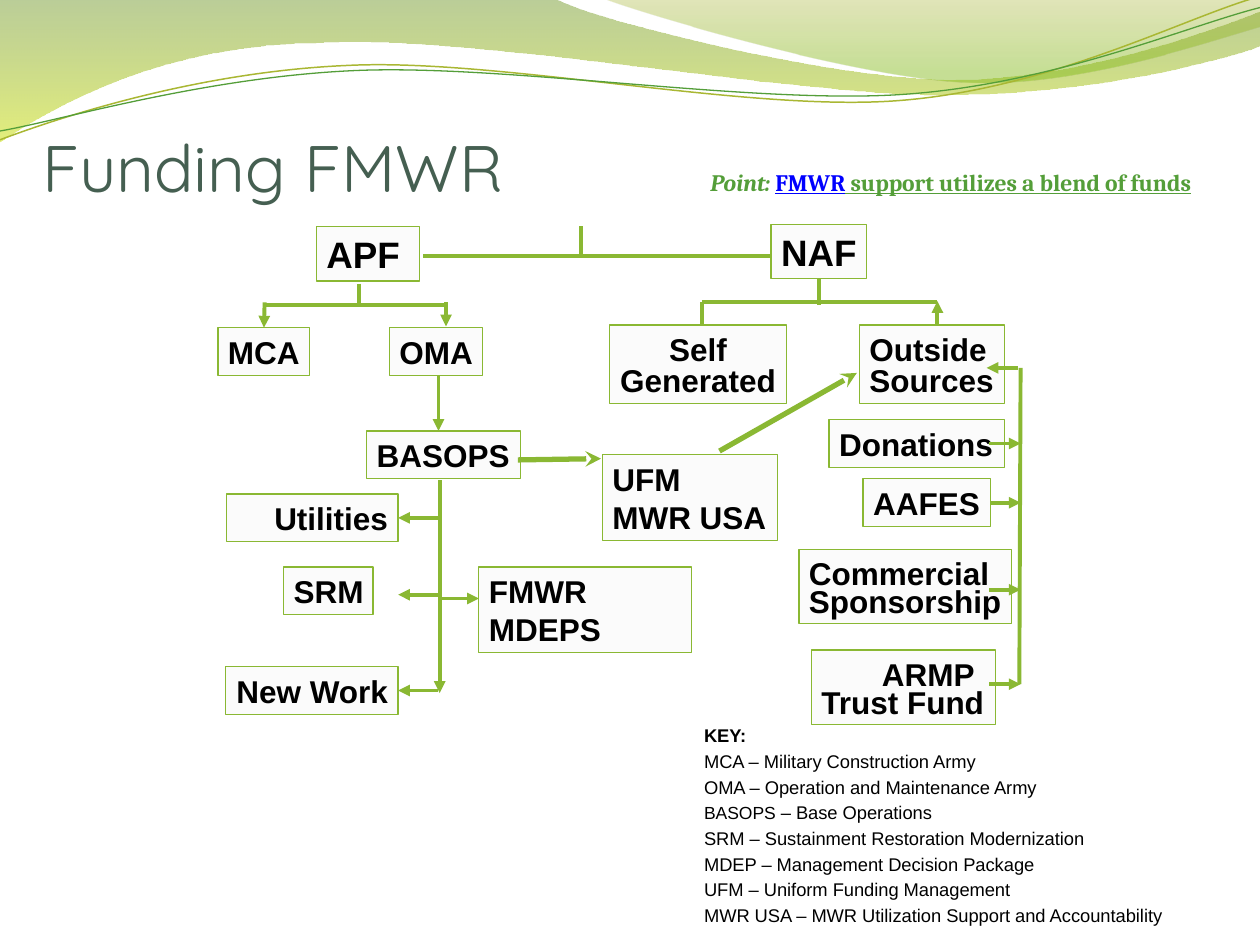
import pptx
import pptx.util
import pptx.dml.color
import pptx.enum.shapes
import pptx.enum.text
import pptx.oxml
import pptx.oxml.ns
from pptx.util import Inches

RGBColor = pptx.dml.color.RGBColor
ALIGN = pptx.enum.text.PP_ALIGN
ANCHOR = pptx.enum.text.MSO_ANCHOR
FIT = pptx.enum.text.MSO_AUTO_SIZE
qn = pptx.oxml.ns.qn
NS = pptx.oxml.ns.nsdecls("a")

GREEN = RGBColor(0x8A, 0xB8, 0x33)
DARK_GREEN = RGBColor(0x54, 0x9E, 0x39)
OLIVE = RGBColor(0xA9, 0xB7, 0x33)
TITLE_GREEN = RGBColor(0x45, 0x5F, 0x51)
BOX_GRAY = RGBColor(0xF8, 0xF8, 0xF8)
BLACK = RGBColor(0, 0, 0)
BLUE = RGBColor(0, 0, 0xFF)
WAVE_TOP, WAVE_BOTTOM = RGBColor(0x69, 0x92, 0x1C), RGBColor(0xCC, 0xE1, 0x0F)
CREST_TOP, CREST_BOTTOM = RGBColor(0x9B, 0xAA, 0x1A), RGBColor(0x81, 0xBA, 0x16)
TOP, LEFT, BOTTOM, RIGHT = range(4)


def set_alpha(fill_element, percents):
    for clr, percent in zip(fill_element.iter(qn("a:srgbClr")), percents):
        clr.append(pptx.oxml.parse_xml(f'<a:alpha {NS} val="{percent * 1000}"/>'))


def set_font(font, name, size, color, bold=False):
    font.name, font.size, font.bold = name, pptx.util.Pt(size), bold
    font.color.rgb = color


def add_curve(s, box, start, segments, closed):
    """Outline of lines (2 numbers each) and cubic curves (6 numbers each)."""
    left, top = box[:2]
    pairs = [start] + [seg[i:i + 2] for seg in segments for i in range(0, len(seg), 2)]
    points = [(Inches(left + x), Inches(top + y)) for x, y in pairs]
    builder = s.shapes.build_freeform(*points[0])
    builder.add_line_segments(points[1:], close=closed)
    sp = builder.convert_to_shape()
    sp.shadow.inherit = False
    steps = iter(list(sp.element.spPr.iter(qn("a:lnTo"))))
    for seg in segments:
        first = next(steps)
        if len(seg) == 6:
            cubic = pptx.oxml.parse_xml(f"<a:cubicBezTo {NS}/>")
            first.addprevious(cubic)
            for step in (first, next(steps), next(steps)):
                cubic.append(step[0])
                step.getparent().remove(step)
    return sp


def add_wave(s, box, start, segments, stops):
    sp = add_curve(s, box, start, segments, True)
    sp.line.fill.background()
    sp.fill.gradient()
    sp.fill.gradient_angle = 270
    for stop, (position, color, _) in zip(sp.fill.gradient_stops, stops):
        stop.position = position
        stop.color.rgb = color
    set_alpha(sp.element.spPr.find(qn("a:gradFill")), [percent for _, _, percent in stops])


def add_strand(s, box, start, segments, color, width):
    sp = add_curve(s, box, start, segments, False)
    sp.fill.background()
    sp.line.color.rgb = color
    sp.line.width = pptx.util.Pt(width)


def wave_banner(s, box):
    add_wave(s, box, (0, -0.01), [
        (4.4, -0.01), (4.75, 0.17, 6.63, 0.63, 7.58, 0.63), (8.53, 0.63, 9.58, 0.26, 10, 0.09),
        (10.01, 0.36), (9.83, 0.44, 8.69, 0.76, 7.45, 0.75), (6.22, 0.75, 3.81, 0.28, 2.57, 0.34),
        (1.29, 0.35, 0.45, 0.83, -0.01, 1.13)], [(0, WAVE_TOP, 45), (1, WAVE_BOTTOM, 55)])
    add_wave(s, box, (4.79, -0.01), [
        (5.09, 0.11, 6.82, 0.62, 7.68, 0.65), (8.55, 0.69, 9.61, 0.32, 10, 0.21), (10, 0)],
        [(0, CREST_TOP, 30), (0.8, CREST_BOTTOM, 45)])
    add_strand(s, box, (0, 1.11), [
        (0.48, 0.93, 1.57, 0.57, 2.76, 0.52), (3.95, 0.46, 5.92, 0.89, 7.12, 0.8),
        (8.33, 0.71, 9.38, 0.15, 9.97, -0.02)], OLIVE, 0.85)
    add_strand(s, box, (0, 1.04), [
        (0.47, 0.96, 1.63, 0.61, 2.83, 0.56), (4.02, 0.51, 5.97, 0.83, 7.16, 0.75),
        (8.36, 0.67, 9.41, 0.21, 10, 0.06)], DARK_GREEN, 0.75)


def title(s, box):
    sp = s.shapes.title
    sp.left, sp.top, sp.width, sp.height = map(Inches, box)
    tf = sp.text_frame
    tf.text = "Funding FMWR"
    tf.vertical_anchor = ANCHOR.BOTTOM
    tf.margin_left = tf.margin_right = tf.margin_bottom = 0
    tf.margin_top = Inches(0.05)
    p = tf.paragraphs[0]
    p.alignment = ALIGN.LEFT
    set_font(p.font, "Quicksand", 37.5, TITLE_GREEN)


def add_node(s, box, x, y, w, h, lines, size=18, align=ALIGN.LEFT, spacing=1.0, wrap=False):
    sp = s.shapes.add_shape(pptx.enum.shapes.MSO_SHAPE.RECTANGLE,
                            Inches(box[0] + x), Inches(box[1] + y), Inches(w), Inches(h))
    sp.shadow.inherit = False
    sp.fill.solid()
    sp.fill.fore_color.rgb = BOX_GRAY
    set_alpha(sp.element.spPr.find(qn("a:solidFill")), [50])
    sp.line.color.rgb = GREEN
    sp.line.width = pptx.util.Pt(0.75)
    tf = sp.text_frame
    tf.word_wrap = wrap
    tf.auto_size = FIT.SHAPE_TO_FIT_TEXT
    tf.vertical_anchor = ANCHOR.TOP
    tf.margin_left = Inches(0.08)
    tf.margin_right = Inches(0.05 if align == ALIGN.LEFT else 0.08)
    tf.margin_top = tf.margin_bottom = Inches(0.04)
    for i, line in enumerate(lines):
        p = tf.add_paragraph() if i else tf.paragraphs[0]
        p.text = line
        p.alignment = align
        if i:
            p.line_spacing = spacing
        set_font(p.font, "Arial", size, BLACK, True)
    return sp


def add_link(s, box, x1, y1, x2, y2, arrow=None, width=2.25, begin=None, end=None):
    left, top = box[:2]
    c = s.shapes.add_connector(pptx.enum.shapes.MSO_CONNECTOR.STRAIGHT, Inches(left + x1),
                               Inches(top + y1), Inches(left + x2), Inches(top + y2))
    c.line.color.rgb = GREEN
    c.line.width = pptx.util.Pt(width)
    if arrow:
        ln = c.element.spPr.find(qn("a:ln"))
        ln.append(pptx.oxml.parse_xml(f'<a:tailEnd {NS} type="{arrow}"/>'))
    c.element.spPr.append(pptx.oxml.parse_xml(f"<a:effectLst {NS}/>"))
    if begin:
        c.begin_connect(*begin)
    if end:
        c.end_connect(*end)


def apf_branch(s, box):
    add_node(s, box, 0.81, 0, 0.82, 0.43, ["APF"], 21)
    mca = add_node(s, box, 0.03, 0.8, 0.73, 0.38, ["MCA"])
    add_node(s, box, 1.39, 0.8, 0.74, 0.38, ["OMA"])
    utilities = add_node(s, box, 0.1, 2.12, 1.36, 0.38, ["Utilities"], align=ALIGN.RIGHT, wrap=True)
    add_node(s, box, 2.1, 2.7, 1.69, 0.68, ["FMWR MDEPS"], wrap=True)
    add_node(s, box, 0.55, 2.7, 0.71, 0.38, ["SRM"])
    new_work = add_node(s, box, 0.09, 3.49, 1.37, 0.38, ["New Work"], align=ALIGN.RIGHT)
    add_node(s, box, 1.21, 1.62, 1.22, 0.38, ["BASOPS"])
    add_link(s, box, 1.15, 0.45, 1.15, 0.63)
    add_link(s, box, 0.4, 0.62, 1.84, 0.62)
    add_link(s, box, 0.4, 0.6, 0.4, 0.79, "triangle", end=(mca, TOP))
    add_link(s, box, 1.84, 0.6, 1.84, 0.79, "triangle")
    add_link(s, box, 1.78, 1.18, 1.78, 1.62, "triangle")
    add_link(s, box, 1.79, 2.01, 1.79, 3.7, "triangle")
    for y, node in ((2.31, utilities), (2.92, None), (3.68, new_work)):
        add_link(s, box, 1.78, y, 1.46, y, "triangle", end=node and (node, RIGHT))
    add_link(s, box, 1.79, 2.95, 2.1, 2.95, "triangle")


def naf_branch(s, box):
    naf = add_node(s, box, 1.34, 0, 0.76, 0.43, ["NAF"], 21)
    add_node(s, box, 0.06, 0.8, 1.4, 0.62, ["Self", "Generated"], align=ALIGN.CENTER, spacing=0.8)
    add_node(s, box, 2.04, 0.8, 1.15, 0.62, ["Outside", "Sources"], spacing=0.8)
    add_node(s, box, 1.8, 1.55, 1.39, 0.38, ["Donations"])
    aafes = add_node(s, box, 2.07, 2.02, 1.01, 0.38, ["AAFES"])
    add_node(s, box, 1.56, 2.58, 1.69, 0.59, ["Commercial", "Sponsorship"], spacing=0.7)
    armp = add_node(s, box, 1.66, 3.38, 1.46, 0.59, ["ARMP", "Trust Fund"], spacing=0.7)
    armp.text_frame.paragraphs[0]._p.get_or_add_pPr().set("indent", str(Inches(0.48)))
    add_node(s, box, 0, 1.83, 1.39, 0.68, ["UFM", "MWR USA"])
    add_link(s, box, 1.72, 0.45, 1.72, 0.64, begin=(naf, BOTTOM))
    add_link(s, box, 0.79, 0.62, 2.66, 0.62)
    add_link(s, box, 0.79, 0.62, 0.79, 0.81)
    add_link(s, box, 2.66, 0.79, 2.66, 0.61, "triangle")
    add_link(s, box, 0.93, 1.8, 2.02, 1.18, "stealth", 3)
    add_link(s, box, 3.32, 1.14, 3.31, 3.65)
    for y, node in ((1.74, None), (2.21, aafes), (2.9, None), (3.65, None)):
        add_link(s, box, 3.07, y, 3.32, y, "triangle", begin=node and (node, RIGHT))
    add_link(s, box, 3.3, 1.14, 3.05, 1.14, "triangle")


def branch_links(s, box):
    add_link(s, box, 0, 0.24, 2.75, 0.24)
    add_link(s, box, 1.25, 0.24, 1.25, 0)
    add_link(s, box, 0.75, 1.86, 1.41, 1.85, "stealth", 3)


def point_line(s, box):
    tf = s.shapes.add_textbox(*map(Inches, box)).text_frame
    tf.word_wrap = True
    p = tf.paragraphs[0]
    set_font(p.font, "Cambria", 13.5, DARK_GREEN, True)
    for text, color, is_label in (("Point: ", DARK_GREEN, True), ("FMWR", BLUE, False),
                                  (" support utilizes a blend of funds", DARK_GREEN, False)):
        r = p.add_run()
        r.text = text
        r.font.italic, r.font.underline = is_label, not is_label
        r.font.color.rgb = color


def key(s, box):
    tf = s.shapes.add_textbox(*map(Inches, box)).text_frame
    tf.word_wrap = True
    entries = [("MCA", "Military Construction Army"), ("OMA", "Operation and Maintenance Army"),
               ("BASOPS", "Base Operations"), ("SRM", "Sustainment Restoration Modernization"),
               ("MDEP", "Management Decision Package"), ("UFM", "Uniform Funding Management"),
               ("MWR USA", "MWR Utilization Support and Accountability")]
    tf.text = "KEY:"
    set_font(tf.paragraphs[0].font, "Arial", 10.5, BLACK, True)
    for short, meaning in entries:
        p = tf.add_paragraph()
        p.space_before = pptx.util.Pt(2.1)
        set_font(p.font, "Arial", 10.5, BLACK)
        if short == "BASOPS":
            r = p.add_run()
            r.text = short
            r.font.size = pptx.util.Pt(10)
            short = ""
        p.add_run().text = f"{short} – {meaning}"


def main():
    prs = pptx.Presentation()
    prs.slide_width, prs.slide_height = Inches(10), Inches(7.5)
    s = prs.slides.add_slide(prs.slide_layouts[5])
    wave_banner(s, (0, 0))
    title(s, (0.34, 0.69, 9, 0.94))
    apf_branch(s, (1.7, 1.8))
    naf_branch(s, (4.78, 1.78))
    branch_links(s, (3.36, 1.79))
    point_line(s, (5.54, 1.28, 4.29, 0.33))
    key(s, (5.49, 5.7, 4.53, 1.7))
    prs.save("out.pptx")


if __name__ == "__main__":
    main()
